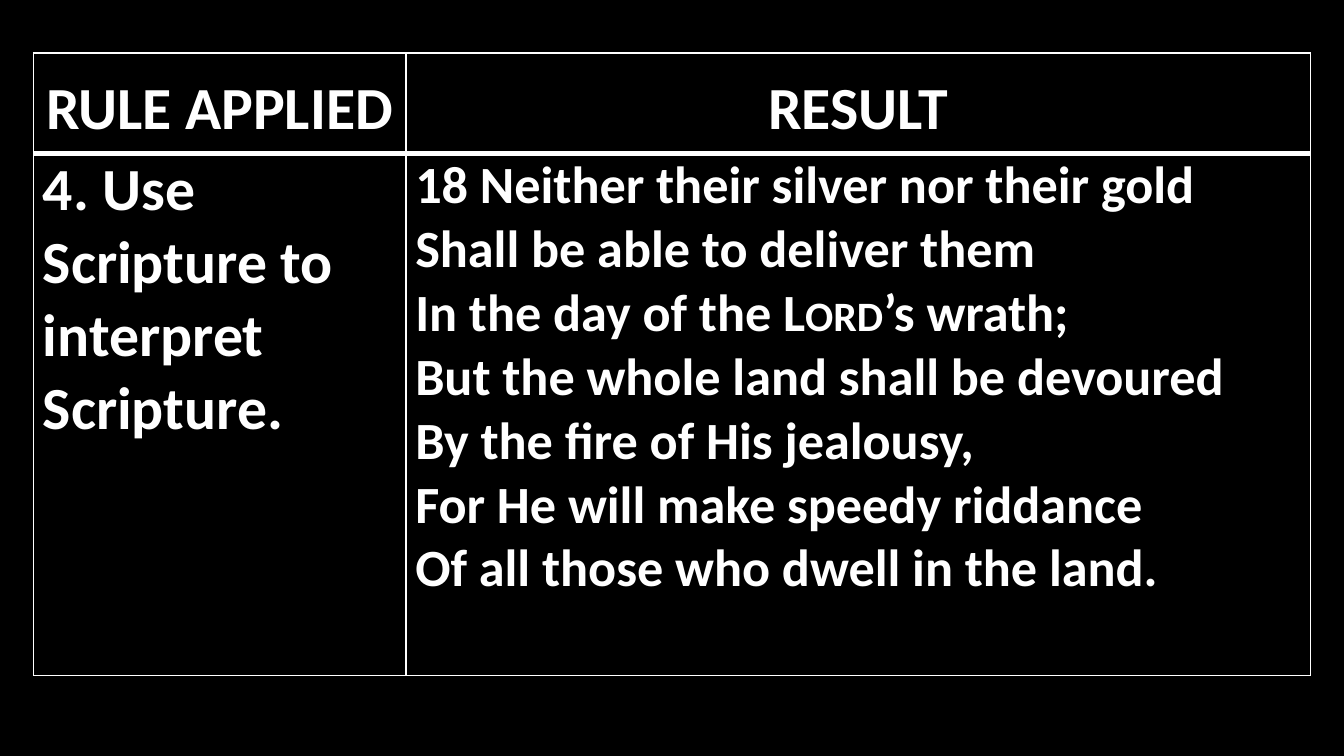
from dataclasses import dataclass

from lxml.etree import SubElement
from pptx import Presentation
from pptx.dml.color import RGBColor as Color
from pptx.enum.text import MSO_ANCHOR as Anchor, PP_ALIGN as Align
from pptx.oxml.ns import qn
from pptx.util import Pt


@dataclass(frozen=True)
class Theme:
    """Colours, font and type sizes."""
    back: str = "000000"
    ink: str = "FFFFFF"
    font: str = "Calibri"
    large: int = 32
    verse: int = 28
    thin: int = 1
    thick: int = 3


THEME = Theme()
HEADS = ("RULE APPLIED", "RESULT")
RULE = "4. Use Scripture to interpret Scripture."
NAME = "Lord"
VERSE = (
    "18\u00a0Neither their silver nor their gold",
    "Shall be able to deliver them",
    "In the day of the Lord’s wrath;",
    "But the whole land shall be devoured",
    "By the fire of His jealousy,",
    "For He will make speedy riddance",
    "Of all those who dwell in the land.",
)


def style(run, size):
    """Give a run the theme's bold face."""
    font = run.font
    font.name, font.size, font.bold = THEME.font, Pt(size), True
    font.color.rgb = Color.from_string(THEME.ink)


def frame(cell, base):
    """Set a cell's fill, margins and borders; base is its bottom line."""
    cell.margin_left = cell.margin_right = Pt(5)
    cell.margin_top = cell.margin_bottom = Pt(0)
    props = cell._tc.get_or_add_tcPr()
    for side in "LRTB":
        width = base if side == "B" else THEME.thin
        line = SubElement(props, qn(f"a:ln{side}"), w=str(Pt(width)))
        fill = SubElement(line, qn("a:solidFill"))
        SubElement(fill, qn("a:srgbClr"), val=THEME.ink)
    cell.fill.solid()
    cell.fill.fore_color.rgb = Color.from_string(THEME.back)


def put_head(cell, text):
    """Write a centred column heading."""
    frame(cell, THEME.thick)
    cell.vertical_anchor = Anchor.MIDDLE
    para = cell.text_frame.paragraphs[0]
    para.text = text
    para.alignment, para.line_spacing = Align.CENTER, 1.15
    style(para.runs[0], THEME.large)


def put_rule(cell):
    """Write the rule in the left column."""
    frame(cell, THEME.thin)
    para = cell.text_frame.paragraphs[0]
    para.text = RULE
    style(para.runs[0], THEME.large)


def put_verse(cell):
    """Write the verse line by line, with the name in small capitals."""
    frame(cell, THEME.thin)
    para = cell.text_frame.paragraphs[0]
    for index, line in enumerate(VERSE):
        if index:
            para.add_line_break()
        for part in filter(None, line.partition(NAME)):
            run = para.add_run()
            run.text = part
            style(run, THEME.verse)
            if part == NAME:
                run.font._element.set("cap", "small")


def put_table(slide, left, top, width, height):
    """Place the table of rule and result in the given box."""
    table = slide.shapes.add_table(
        2, 2, Pt(left), Pt(top), Pt(width), Pt(height)).table
    table.horz_banding = False
    first, head = 199.5, 54
    for col, size in zip(table.columns, (first, width - first)):
        col.width = Pt(size)
    for row, size in zip(table.rows, (head, height - head)):
        row.height = Pt(size)
    for index, text in enumerate(HEADS):
        put_head(table.cell(0, index), text)
    put_rule(table.cell(1, 0))
    put_verse(table.cell(1, 1))


def main():
    """Build and save the slide."""
    deck = Presentation()
    deck.slide_width, deck.slide_height = Pt(720), Pt(405)
    slide = deck.slides.add_slide(deck.slide_layouts[6])
    fill = slide.background.fill
    fill.solid()
    fill.fore_color.rgb = Color.from_string(THEME.back)
    put_table(slide, 18, 28.5, 684, 333.5)
    deck.save("out.pptx")


if __name__ == "__main__":
    main()
